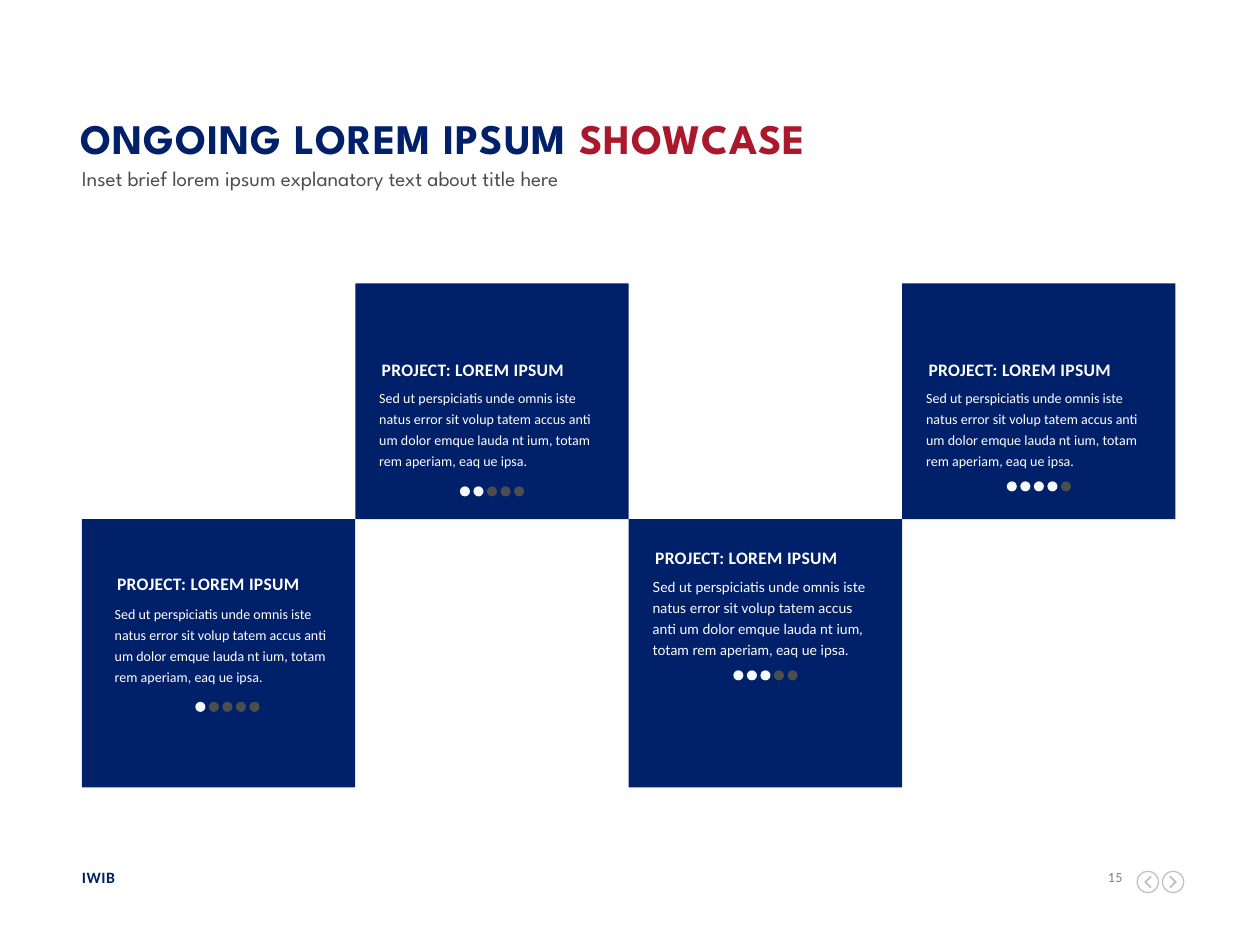
from pptx import Presentation
from pptx.dml.color import RGBColor
from pptx.enum.shapes import MSO_SHAPE
from pptx.enum.text import MSO_ANCHOR, MSO_AUTO_SIZE, PP_ALIGN
from pptx.oxml.ns import qn
from pptx.util import Inches, Pt

NAVY, RED, GRAY, WHITE = "002069", "AA182C", "4D4D4D", "FFFFFF"
DOT_ON, ICON, PAGE = "F6F8FA", "BFBFBF", "808080"
HEADING = "PROJECT: LOREM IPSUM"
BODY = ("Sed ut perspiciatis unde omnis iste natus error sit volup tatem accus "
        "anti um dolor emque lauda nt ium, totam rem aperiam, eaq ue ipsa.")
TILES = [(2.82, 2.25, 1.87), (7.16, 2.25, 1.87), (0.65, 4.12, 2.13), (4.99, 4.12, 2.13)]
PROJECTS = [
    (3.01, 2.85, 3.06, 3.86, 2, "Calibri"),
    (7.35, 2.85, 3.06, 3.82, 4, "Calibri"),
    (5.18, 4.34, 4.56, 5.32, 3, "Lato"),
    (0.91, 4.55, 4.77, 5.57, 1, "Calibri"),
]
CHEVRON = [(-0.03, -0.04), (0.01, 0), (-0.03, 0.04), (-0.02, 0.05), (0.03, 0), (-0.02, -0.05)]


def rgb(value):
    return RGBColor.from_string(value)


def box(x, y, w, h):
    return [Inches(v) for v in (x, y, w, h)]


def paint(sp, color):
    sp.shadow.inherit = False
    sp.fill.solid()
    sp.fill.fore_color.rgb = rgb(color)
    sp.line.fill.background()


def add_fill_shape(shapes, kind, at, color):
    sp = shapes.add_shape(kind, *box(*at))
    paint(sp, color)


def write(sp, runs, size, font="Calibri", bold=False, spc=0, align=PP_ALIGN.LEFT,
          leading=None, anchor=MSO_ANCHOR.TOP):
    tf = sp.text_frame
    tf.word_wrap = True
    tf.auto_size = MSO_AUTO_SIZE.NONE
    tf.vertical_anchor = anchor
    tf.margin_left = tf.margin_top = tf.margin_right = tf.margin_bottom = 0
    p = tf.paragraphs[0]
    p.alignment = align
    p.space_before = Pt(0)
    if leading:
        p.line_spacing = Pt(leading)
    for text, color in runs:
        r = p.add_run()
        r.text = text
        r.font.size = Pt(size)
        r.font.name = font
        r.font.bold = bold
        r.font.color.rgb = rgb(color)
        if spc:
            r.font._element.set("spc", str(round(spc * 100)))


def add_text(shapes, at, text, color, size, **style):
    write(shapes.add_textbox(*box(*at)), [(text, color)], size, **style)


def fill_placeholder(sp, at, runs, size, **style):
    sp.left, sp.top, sp.width, sp.height = box(*at)
    write(sp, runs, size, font="League Spartan", **style)


def add_project(s, x, heading_y, body_y, dots_y, score, font):
    shapes = s.shapes.add_group_shape().shapes
    add_text(shapes, (x, body_y, 1.78, 0.68), BODY, WHITE, 8, font=font, leading=12)
    add_text(shapes, (x + 0.02, heading_y, 1.76, 0.17), HEADING, WHITE, 10,
             bold=True, spc=0.2, align=PP_ALIGN.JUSTIFY)
    for i in range(5):
        add_fill_shape(shapes, MSO_SHAPE.OVAL, (x + 0.64 + i * 0.43 / 4, dots_y, 0.08, 0.08),
                       DOT_ON if i < score else GRAY)


def circle(r):
    k = 0.55 * r
    points = [(r, 0)]
    for dx, dy in [(1, 0), (0, 1), (-1, 0), (0, -1)]:
        points += [(r * dx - k * dy, r * dy + k * dx),
                   (k * dx - r * dy, k * dy + r * dx), (-r * dy, r * dx)]
    return points


def polygon(points):
    return points[:1] + [pt for pt in points[1:] for _ in range(3)]


def curve_segments(sp):
    lines = list(sp._element.iter(qn("a:lnTo")))
    for first, second, third in zip(lines[::3], lines[1::3], lines[2::3]):
        curve = first.makeelement(qn("a:cubicBezTo"), {})
        first.addprevious(curve)
        for line in (first, second, third):
            curve.append(line[0])
            line.getparent().remove(line)


def add_nav_icon(s, cx, cy, direction):
    arrow = polygon([(direction * x, y) for x, y in CHEVRON])
    builder = None
    for contour in (arrow, circle(0.09), circle(0.08)):
        points = [(Inches(cx + x), Inches(cy + y)) for x, y in contour]
        if builder is None:
            builder = s.shapes.build_freeform(*points[0])
        else:
            builder.move_to(*points[0])
        builder.add_line_segments(points[1:], close=True)
    sp = builder.convert_to_shape()
    curve_segments(sp)
    paint(sp, ICON)


def main():
    prs = Presentation()
    prs.slide_width, prs.slide_height = Inches(10), Inches(7.5)
    s = prs.slides.add_slide(prs.slide_layouts[0])
    add_text(s.shapes, (0.65, 6.89, 1.95, 0.15), "IWIB", NAVY, 9, bold=True, spc=0.3)
    add_text(s.shapes, (8.68, 6.89, 0.23, 0.13), "15", PAGE, 8, spc=0.3, align=PP_ALIGN.RIGHT)
    add_nav_icon(s, 9.31, 7, 1)
    add_nav_icon(s, 9.11, 7, -1)
    fill_placeholder(s.shapes.title, (0.64, 0.87, 8.7, 0.42),
                     [("ONGOING LOREM IPSUM ", NAVY), ("SHOWCASE", RED)], 24,
                     bold=True, spc=0.5, anchor=MSO_ANCHOR.BOTTOM)
    fill_placeholder(s.placeholders[1], (0.65, 1.35, 8.7, 0.15),
                     [("Inset brief lorem ipsum explanatory text about title here", GRAY)],
                     12, leading=12)
    for x, y, h in TILES:
        add_fill_shape(s.shapes, MSO_SHAPE.RECTANGLE, (x, y, 2.17, h), NAVY)
    for project in PROJECTS:
        add_project(s, *project)
    prs.save("out.pptx")


if __name__ == "__main__":
    main()
